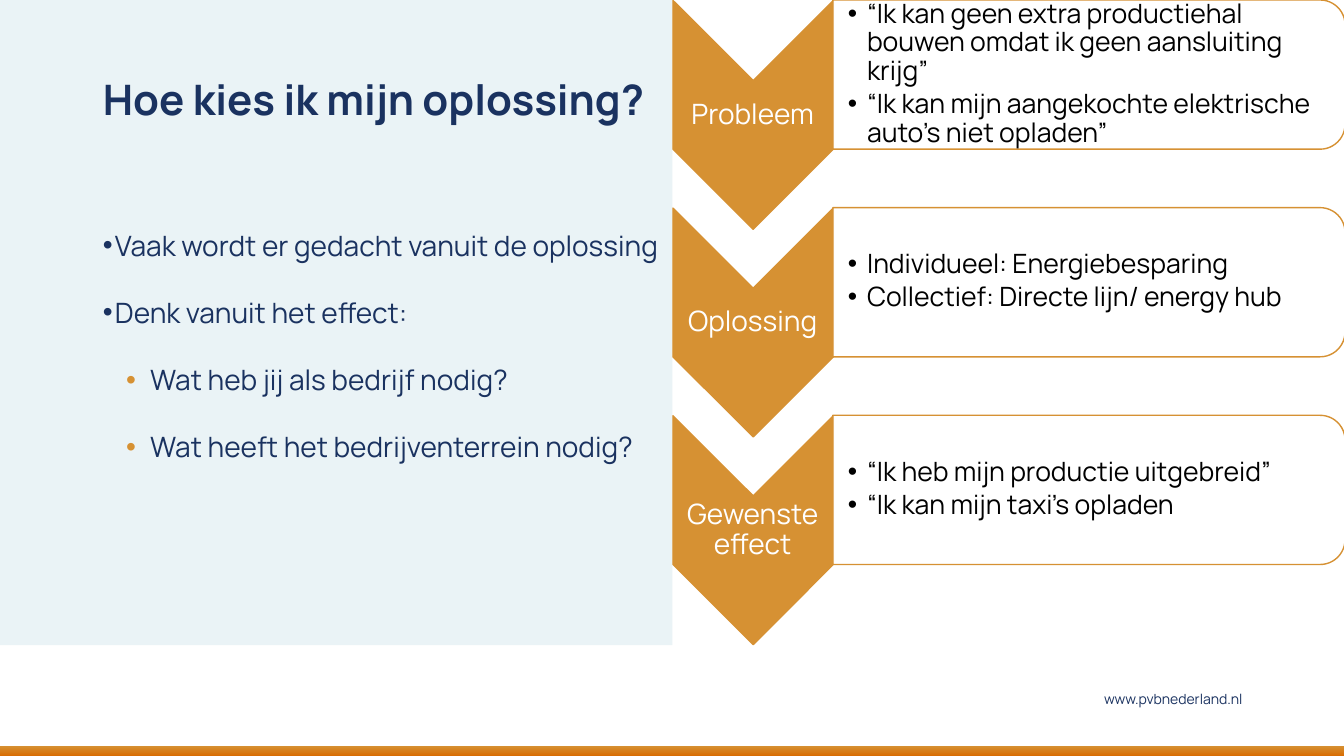
from lxml import etree
from pptx import Presentation
from pptx.dml.color import RGBColor
from pptx.enum import shapes, text
from pptx.oxml import ns
from pptx.util import Inches, Pt

FONT = "Manrope"
NAVY, ORANGE, WHITE, BLACK = "1A3260", "D69133", "FFFFFF", "000000"
PALE_BLUE, DARK_ORANGE = "EAF3F6", "D86D03"
SHAPE, ALIGN = shapes.MSO_SHAPE, text.PP_ALIGN

STEP_PITCH = 2.06
CHEVRON_CENTRE = (7.47, 1.14)
PANEL_CENTRE = (10.8, 0.74)
STEPS = [
    ("Probleem", ["“Ik kan geen extra productiehal bouwen omdat ik geen aansluiting krijg”",
                  "“Ik kan mijn aangekochte elektrische auto’s niet opladen”"]),
    ("Oplossing", ["Individueel: Energiebesparing",
                   "Collectief: Directe lijn/ energy hub"]),
    ("Gewenste effect", ["“Ik heb mijn productie uitgebreid”",
                         "“Ik kan mijn taxi’s opladen"]),
]
ADVICE = [
    (0, "Vaak wordt er gedacht vanuit de oplossing"),
    (0, "Denk vanuit het effect:"),
    (1, "Wat heb jij als bedrijf nodig?"),
    (1, "Wat heeft het bedrijventerrein nodig?"),
]


def rgb(colour):
    return RGBColor.from_string(colour)


def set_attributes(target, values):
    for name, value in values.items():
        setattr(target, name, value)


def place(shape, left, top, width, height):
    set_attributes(shape, {"left": Inches(left), "top": Inches(top),
                           "width": Inches(width), "height": Inches(height)})


def add_block(slide, kind, box, fill, line=None):
    block = slide.shapes.add_shape(kind, *map(Inches, box))
    block.shadow.inherit = False
    block.fill.solid()
    block.fill.fore_color.rgb = rgb(fill)
    if line:
        block.line.color.rgb = rgb(line)
        block.line.width = Pt(1)
    else:
        block.line.fill.background()
    return block


def add_turned_block(slide, kind, centre, size, fill):
    """Add an outlined shape turned a quarter clockwise about its centre."""
    (x, y), (width, height) = centre, size
    box = (x - width / 2, y - height / 2, width, height)
    block = add_block(slide, kind, box, fill, ORANGE)
    block.rotation = 90
    return block


def make_translucent(block, percent):
    colour = block.fill._xPr.find(".//" + ns.qn("a:srgbClr"))
    etree.SubElement(colour, ns.qn("a:alpha"), val=str(percent * 1000))


def set_frame(shape, insets, anchor=text.MSO_ANCHOR.MIDDLE):
    left, top, right, bottom = map(Inches, insets)
    set_attributes(shape.text_frame, {
        "word_wrap": True, "auto_size": text.MSO_AUTO_SIZE.NONE,
        "vertical_anchor": anchor, "margin_left": left, "margin_top": top,
        "margin_right": right, "margin_bottom": bottom})


def set_bullet(paragraph, margin, hanging, colour=None):
    props = paragraph._p.get_or_add_pPr()
    props.set("marL", str(Inches(margin)))
    props.set("indent", str(-Inches(hanging)))
    if colour:
        bullet_colour = etree.SubElement(props, ns.qn("a:buClr"))
        etree.SubElement(bullet_colour, ns.qn("a:srgbClr"), val=colour)
    etree.SubElement(props, ns.qn("a:buFont"), typeface="Arial")
    etree.SubElement(props, ns.qn("a:buChar"), char="•")


def write(shape, index, words, size, colour, bullet=None, bold=False, **layout):
    """Write one paragraph; bullet is (margin, hanging[, colour])."""
    frame = shape.text_frame
    paragraph = frame.add_paragraph() if index else frame.paragraphs[0]
    if bullet:
        set_bullet(paragraph, *bullet)
    set_attributes(paragraph, {"space_before": Pt(0), **layout})
    run = paragraph.add_run()
    run.text = words
    set_attributes(run.font, {"name": FONT, "size": Pt(size), "bold": bold})
    run.font.color.rgb = rgb(colour)


def add_text(slide, box, insets):
    label = slide.shapes.add_textbox(*map(Inches, box))
    set_frame(label, insets)
    return label


def add_background(slide):
    bar = add_block(slide, SHAPE.RECTANGLE, (0, 7.4, 13.33, 0.1), ORANGE)
    bar.fill.gradient()
    bar.fill.gradient_angle = 270
    for stop, colour in zip(bar.fill.gradient_stops, (ORANGE, DARK_ORANGE)):
        stop.color.rgb = rgb(colour)
    add_block(slide, SHAPE.RECTANGLE, (0, 0, 6.67, 6.4), PALE_BLUE)


def add_step(slide, index, name, examples):
    drop = index * STEP_PITCH
    x, y = CHEVRON_CENTRE[0], CHEVRON_CENTRE[1] + drop
    add_turned_block(slide, SHAPE.CHEVRON, (x, y), (2.27, 1.59), ORANGE)
    label = add_text(slide, (6.67, y - 0.34, 1.59, 0.68), [0.01] * 4)
    write(label, 0, name, 20, WHITE, alignment=ALIGN.CENTER, line_spacing=0.9)

    x, y = PANEL_CENTRE[0], PANEL_CENTRE[1] + drop
    panel = add_turned_block(slide, SHAPE.ROUND_2_SAME_RECTANGLE, (x, y),
                             (1.48, 5.08), WHITE)
    make_translucent(panel, 90)
    quotes = add_text(slide, (8.26, y - 0.67, 5, 1.33), (0.15, 0.01, 0.01, 0.01))
    for row, example in enumerate(examples):
        write(quotes, row, example, 19, BLACK, bullet=(0.19, 0.19),
              line_spacing=0.9, space_after=Pt(3))


def fill_title(title):
    place(title, 1.02, 0.4, 5.65, 1.22)
    set_frame(title, (0, 0.05, 0.1, 0.05))
    write(title, 0, "Hoe kies ik mijn oplossing?", 30, NAVY, bold=True,
          alignment=ALIGN.LEFT, line_spacing=0.9)


def fill_advice(body):
    place(body, 1.02, 1.93, 5.65, 4.47)
    set_frame(body, (0, 0, 0.1, 0.05), text.MSO_ANCHOR.TOP)
    bullets = [(0.12, 0.12), (0.47, 0.24, ORANGE)]
    for row, (level, words) in enumerate(ADVICE):
        write(body, row, words, 20, NAVY, bullet=bullets[level],
              level=level, line_spacing=2.0)


def main():
    deck = Presentation()
    deck.slide_width, deck.slide_height = Inches(13.33), Inches(7.5)
    slide = deck.slides.add_slide(deck.slide_layouts[1])
    title, body = slide.placeholders

    add_background(slide)
    for placeholder in (title, body):  # bring in front of the background
        slide.shapes._spTree.append(placeholder._element)
    fill_title(title)
    fill_advice(body)

    website = add_text(slide, (10.78, 6.73, 1.64, 0.4), (0.1, 0.05, 0.1, 0.05))
    write(website, 0, "www.pvbnederland.nl", 10, NAVY, alignment=ALIGN.RIGHT)
    for index, (name, examples) in enumerate(STEPS):
        add_step(slide, index, name, examples)
    deck.save("out.pptx")


if __name__ == "__main__":
    main()
